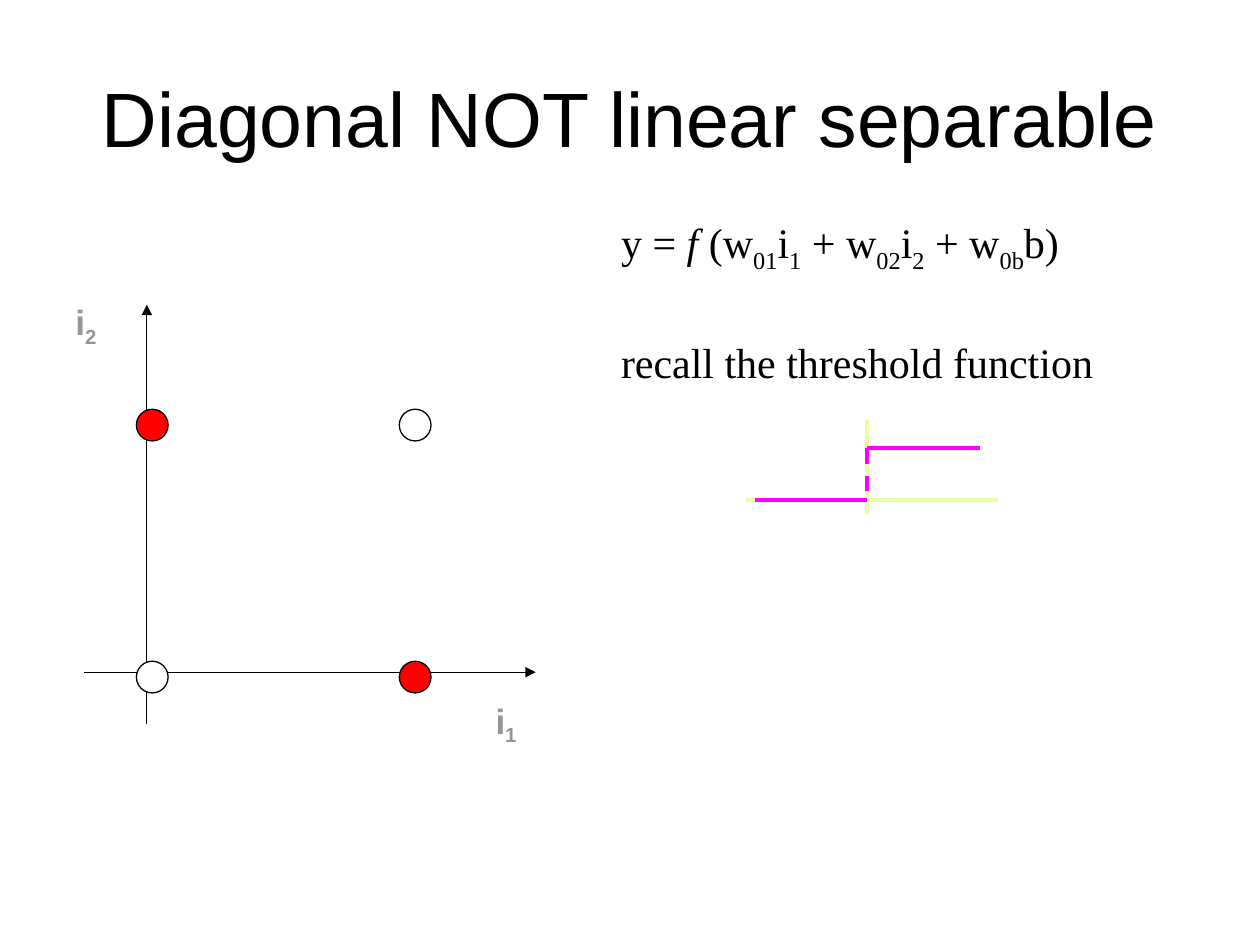
from dataclasses import dataclass

from lxml import etree
from pptx import Presentation
from pptx.dml.color import RGBColor
from pptx.enum.dml import MSO_LINE
from pptx.enum.shapes import MSO_CONNECTOR, MSO_SHAPE
from pptx.enum.text import MSO_ANCHOR, PP_ALIGN
from pptx.oxml.ns import qn
from pptx.util import Cm, Pt

STRAIGHT = MSO_CONNECTOR.STRAIGHT
OVAL = MSO_SHAPE.OVAL
DASH = MSO_LINE.DASH
LEFT, CENTER = PP_ALIGN.LEFT, PP_ALIGN.CENTER
TOP, MIDDLE = MSO_ANCHOR.TOP, MSO_ANCHOR.MIDDLE


@dataclass(frozen=True)
class Theme:
    black: RGBColor = RGBColor.from_string("000000")
    white: RGBColor = RGBColor.from_string("FFFFFF")
    red: RGBColor = RGBColor.from_string("FF0000")
    gray: RGBColor = RGBColor.from_string("969696")
    lime: RGBColor = RGBColor.from_string("E9FFA3")
    magenta: RGBColor = RGBColor.from_string("FF00FF")
    sans: str = "Arial"
    serif: str = "Times New Roman"
    title_size: int = 44
    body_size: int = 24
    label_size: int = 20
    thin: float = 0.75
    thick: float = 2.25


theme = Theme()


def add_text(shapes, box, paragraphs, size, font, color=theme.black, bold=False,
             align=LEFT, anchor=TOP, spacing=(0,)):
    shape = shapes.add_textbox(*map(Cm, box))
    frame = shape.text_frame
    frame.word_wrap = True
    frame.vertical_anchor = anchor
    for index, (runs, before) in enumerate(zip(paragraphs, spacing)):
        paragraph = frame.add_paragraph() if index else frame.paragraphs[0]
        paragraph.alignment = align
        paragraph.space_before = Pt(before)
        for text, style in runs:
            run = paragraph.add_run()
            run.text = text
            run.font.size = Pt(size)
            run.font.name = font
            run.font.bold = bold
            run.font.italic = style == "italic"
            run.font.color.rgb = color
            if style == "subscript":
                run.font._element.set("baseline", "-25000")


def add_line(shapes, points, color, width, arrow=False, dash=None):
    connector = shapes.add_connector(STRAIGHT, *map(Cm, points))
    connector.line.color.rgb = color
    connector.line.width = Pt(width)
    connector.line.dash_style = dash
    if arrow:
        line = connector.line._get_or_add_ln()
        etree.SubElement(line, qn("a:tailEnd"), type="triangle", w="med", len="med")
    etree.SubElement(connector._element.spPr, qn("a:effectLst"))


presentation = Presentation()
presentation.slide_width = Cm(25.4)
presentation.slide_height = Cm(19.05)
slide = presentation.slides.add_slide(presentation.slide_layouts[6])

add_text(slide.shapes, (1.27, 0.76, 22.86, 3.18), [[("Diagonal NOT linear separable", "")]],
         theme.title_size, theme.sans, align=CENTER, anchor=MIDDLE)

formula = [("y = ", ""), ("f ", "italic"), ("(w", ""), ("01", "subscript"),
           ("i", ""), ("1", "subscript"), (" + w", ""), ("02", "subscript"),
           ("i", ""), ("2", "subscript"), (" + w", ""), ("0b", "subscript"), ("b)", "")]
add_text(slide.shapes, (12.27, 4.24, 12.27, 13.77),
         [formula, [("recall the threshold function", "")]],
         theme.body_size, theme.serif, spacing=(3, 36))

plot = slide.shapes.add_group_shape().shapes
for axis in [(2.96, 14.6, 2.96, 6.14), (1.69, 13.55, 10.8, 13.55)]:
    add_line(plot, axis, theme.black, theme.thin, arrow=True)

for index, left, top in [("2", 1.27, 5.93), ("1", 9.74, 13.97)]:
    add_text(plot, (left, top, 1.06, 1.09), [[("i", ""), (index, "subscript")]],
             theme.label_size, theme.sans, color=theme.gray, bold=True)

diameter = Cm(0.64)
for row, top in enumerate((13.33, 8.25)):
    for column, left in enumerate((2.75, 8.05)):
        point = plot.add_shape(OVAL, Cm(left), Cm(top), diameter, diameter)
        point.shadow.inherit = False
        point.fill.solid()
        point.fill.fore_color.rgb = theme.white if row == column else theme.red
        point.line.color.rgb = theme.black
        point.line.width = Pt(theme.thin)

threshold = slide.shapes.add_group_shape().shapes
step_x, low_y, high_y = 17.48, 10.08, 9.04
for points, color, dash in [
    ((15.04, low_y, 20.12, low_y), theme.lime, None),
    ((step_x, 8.47, step_x, 10.37), theme.lime, None),
    ((15.21, low_y, step_x, low_y), theme.magenta, None),
    ((step_x, high_y, 19.75, high_y), theme.magenta, None),
    ((step_x, high_y, step_x, low_y), theme.magenta, DASH),
]:
    add_line(threshold, points, color, theme.thick, dash=dash)

presentation.save("out.pptx")
